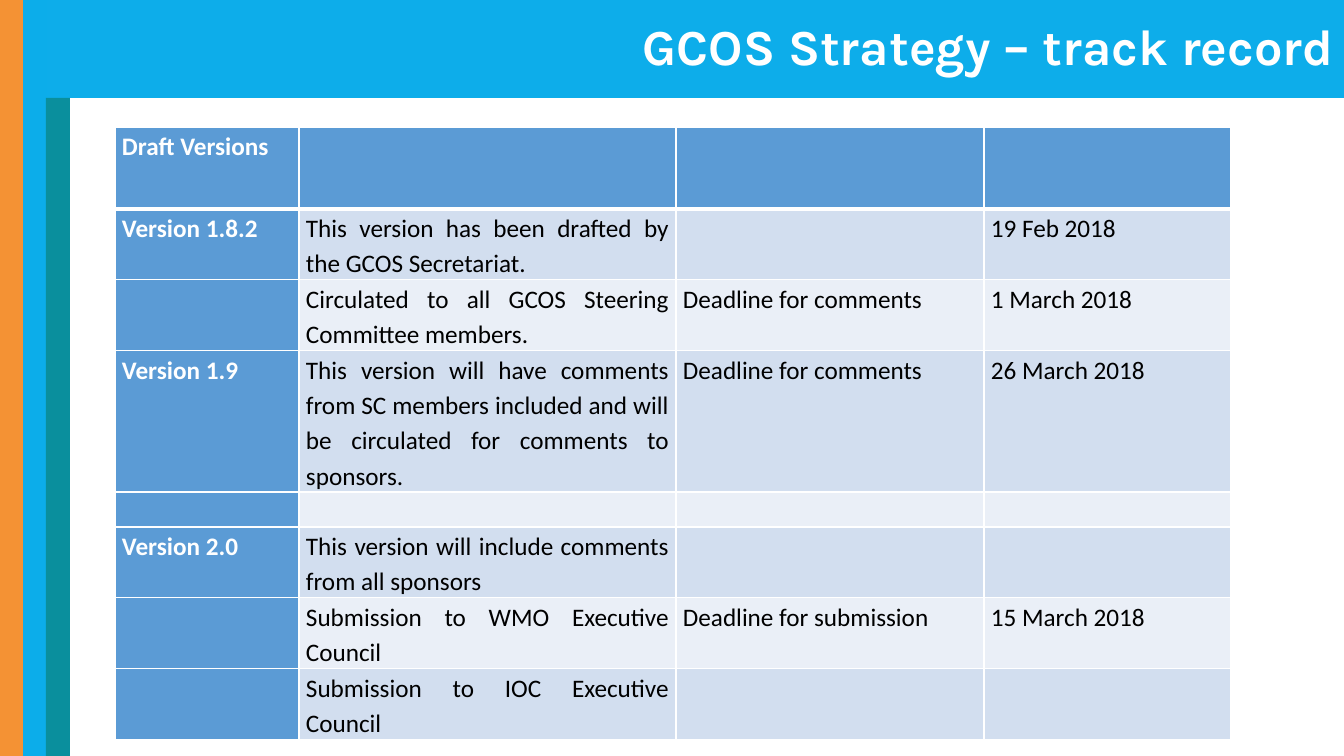
from lxml import etree
from pptx import Presentation
from pptx import util as u
from pptx.dml.color import RGBColor
from pptx.enum import shapes, text
from pptx.oxml import ns

COLORS = {
    "orange": "F49234",
    "sky": "0CADEA",
    "teal": "0A8F9D",
    "banner": "0DADEA",
    "header": "5B9BD5",
    "band_dark": "D2DEEF",
    "band_light": "EAEFF7",
    "white": "FFFFFF",
    "black": "000000",
}
RGB = {name: RGBColor.from_string(value) for name, value in COLORS.items()}


def px(count):
    """Turn pixels, 100.8 to the inch, into EMU."""
    return u.Emu(round(count * 914400 / 100.8))


def add_borders(cell, bottom_points):
    """Give a cell white borders, 1 pt except for the bottom one."""
    properties = cell._tc.get_or_add_tcPr()
    widths = {"lnL": 1, "lnR": 1, "lnT": 1, "lnB": bottom_points}
    for index, (side, points) in enumerate(widths.items()):
        line = etree.Element(ns.qn(f"a:{side}"), w=str(u.Pt(points)))
        fill = etree.SubElement(line, ns.qn("a:solidFill"))
        etree.SubElement(fill, ns.qn("a:srgbClr"), val=COLORS["white"])
        properties.insert(index, line)


deck = Presentation()
deck.slide_width, deck.slide_height = px(1344), px(756)
page = deck.slides.add_slide(deck.slide_layouts[5])

# Side stripes; the teal one starts below the banner
for index, (color, top) in enumerate([("orange", 0), ("sky", 0), ("teal", 98)]):
    stripe = page.shapes.add_shape(
        shapes.MSO_SHAPE.RECTANGLE, px(23 * index), px(top), px(24), px(756 - top))
    stripe.shadow.inherit = False
    stripe.fill.solid()
    stripe.fill.fore_color.rgb = RGB[color]
    stripe.line.fill.background()

# Title banner
title = page.shapes.title
title.left, title.top, title.width, title.height = px(46), px(0), px(1298), px(98)
title.fill.solid()
title.fill.fore_color.rgb = RGB["banner"]
frame = title.text_frame
frame.text = "GCOS Strategy – track record"
frame.auto_size = text.MSO_AUTO_SIZE.NONE
frame.vertical_anchor = text.MSO_ANCHOR.MIDDLE
para = frame.paragraphs[0]
para.alignment = text.PP_ALIGN.RIGHT
para.line_spacing = 0.9
para.font.name, para.font.size, para.font.bold = "Karla", u.Pt(36), True
para.font.color.rgb = RGB["white"]

# Table of draft versions
column_widths = [184, 377, 308, 247]
rows = [
    (82, ["Draft Versions", "", "", ""]),
    (69, ["Version 1.8.2", "This version has been drafted by the GCOS Secretariat.",
          "", "19 Feb 2018"]),
    (69, ["", "Circulated to all GCOS Steering Committee members.",
          "Deadline for comments", "1 March 2018"]),
    (139, ["Version 1.9", "This version will have comments from SC members included "
           "and will be circulated for comments to sponsors.",
           "Deadline for comments", "26 March 2018"]),
    (35, ["", "", "", ""]),
    (69, ["Version 2.0", "This version will include comments from all sponsors", "", ""]),
    (69, ["", "Submission to WMO Executive Council",
          "Deadline for submission", "15 March 2018"]),
    (69, ["", "Submission to IOC Executive Council", "", ""]),
]
table = page.shapes.add_table(
    len(rows), len(column_widths), px(115), px(127),
    px(sum(column_widths)), px(sum(height for height, _ in rows))).table
table.first_col = True
for column, width in zip(table.columns, column_widths):
    column.width = px(width)

for row_index, (height, entries) in enumerate(rows):
    table.rows[row_index].height = px(height)
    band = "band_dark" if row_index % 2 else "band_light"
    for column_index, entry in enumerate(entries):
        is_heading = row_index == 0 or column_index == 0
        cell = table.cell(row_index, column_index)
        cell.margin_left = cell.margin_right = px(7)
        cell.margin_top = cell.margin_bottom = 0
        cell.fill.solid()
        cell.fill.fore_color.rgb = RGB["header" if is_heading else band]
        add_borders(cell, 3 if row_index == 0 else 1)
        cell.text = entry
        para = cell.text_frame.paragraphs[0]
        para.alignment = text.PP_ALIGN.JUSTIFY
        para.line_spacing = 1.15
        para.font.name, para.font.size, para.font.bold = "Calibri", u.Pt(18), is_heading
        para.font.color.rgb = RGB["white" if is_heading else "black"]

deck.save("out.pptx")
